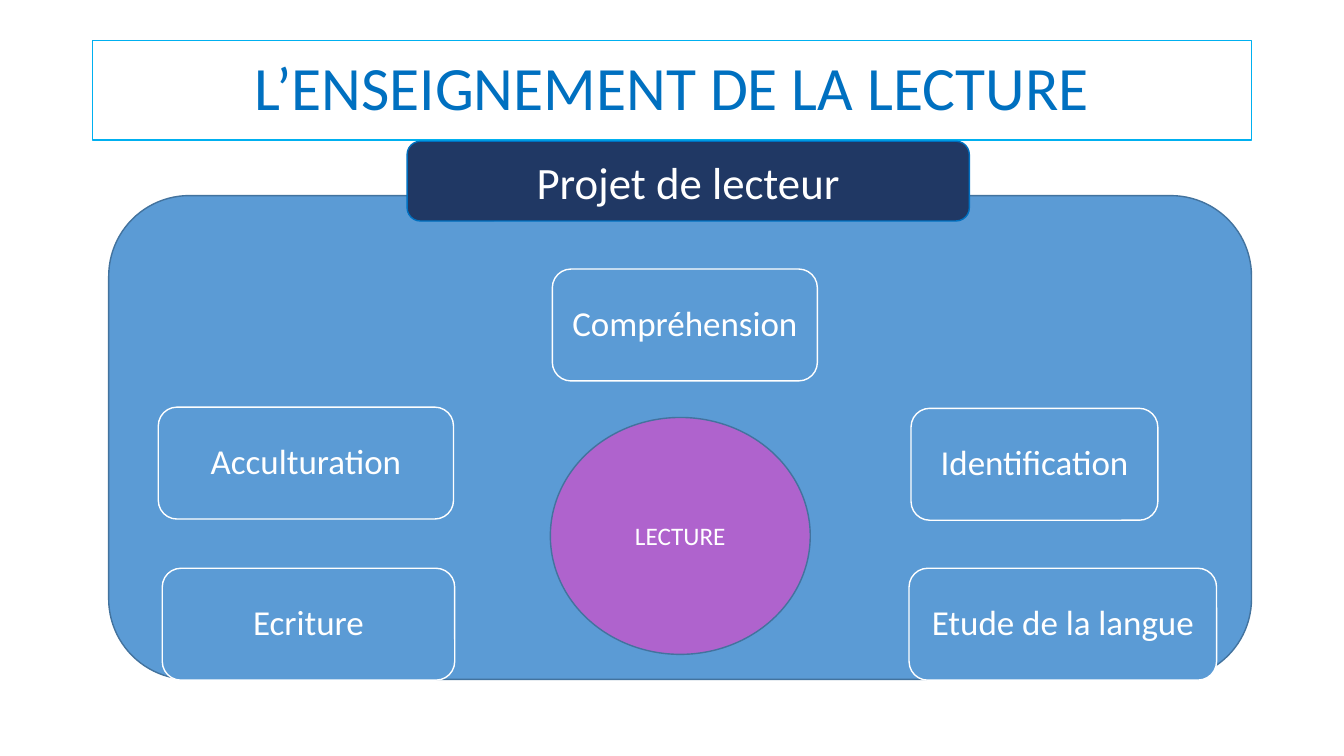
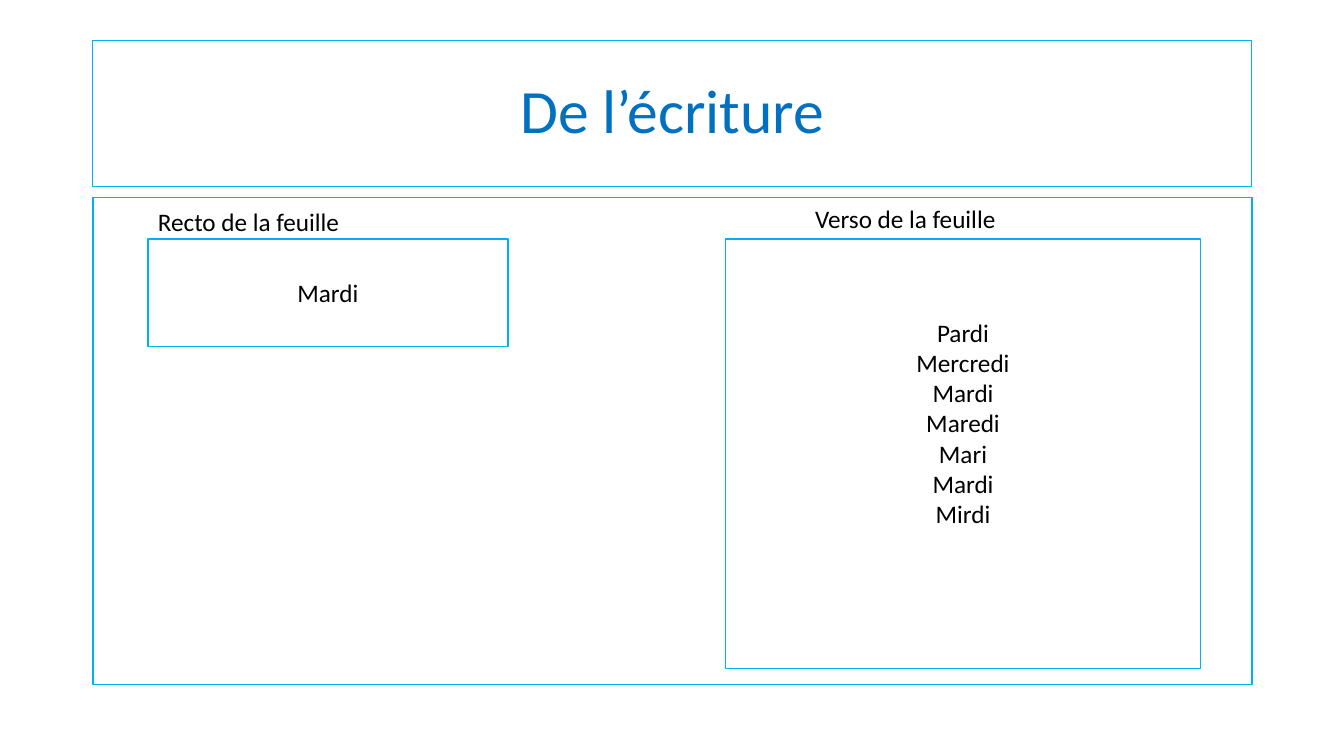
"""Build two slides on teaching reading and on writing."""
import dataclasses

import pptx
import pptx.dml.color
import pptx.enum.shapes
import pptx.enum.text
import pptx.util

Cm = pptx.util.Cm
Pt = pptx.util.Pt
Preset = pptx.enum.shapes.MSO_SHAPE
Align = pptx.enum.text.PP_ALIGN
Anchor = pptx.enum.text.MSO_ANCHOR


@dataclasses.dataclass(frozen=True)
class Theme:
    font: str = "Calibri"
    white: str = "FFFFFF"
    black: str = "000000"
    title: str = "0070C0"
    frame: str = "00B0F0"
    panel: str = "5B9BD5"
    outline: str = "43739E"
    core: str = "AF63CD"
    banner: str = "203864"
    title_size: int = 44
    banner_size: int = 32
    topic_size: int = 25
    body_size: int = 18


class Deck:
    def __init__(self, theme):
        self.theme = theme
        self.presentation = pptx.Presentation()
        self.presentation.slide_width = Cm(33.87)
        self.presentation.slide_height = Cm(19.05)
        self.slide = None

    def new_slide(self, title, title_height):
        blank = self.presentation.slide_layouts[6]
        self.slide = self.presentation.slides.add_slide(blank)
        heading = self.box((2.34, 1.02, 29.21, title_height), None,
                           self.theme.frame, weight=0.75)
        self.set_text(heading, [title], self.theme.title_size,
                      self.theme.title, spacing=0.9)

    def box(self, area, fill, line, preset=Preset.RECTANGLE, weight=1):
        shape = self.slide.shapes.add_shape(preset, *map(Cm, area))
        shape.shadow.inherit = False
        if fill:
            shape.fill.solid()
            shape.fill.fore_color.rgb = pptx.dml.color.RGBColor.from_string(fill)
        else:
            shape.fill.background()
        shape.line.color.rgb = pptx.dml.color.RGBColor.from_string(line)
        shape.line.width = Pt(weight)
        return shape

    def set_text(self, shape, lines, size, color, align=Align.CENTER,
                 anchor=Anchor.MIDDLE, spacing=1.0):
        frame = shape.text_frame
        frame.word_wrap = True
        frame.vertical_anchor = anchor
        frame.text = "\n".join(lines)
        for paragraph in frame.paragraphs:
            paragraph.alignment = align
            paragraph.line_spacing = spacing
            paragraph.font.name = self.theme.font
            paragraph.font.size = Pt(size)
            paragraph.font.color.rgb = pptx.dml.color.RGBColor.from_string(color)

    def topic(self, label, left, top, width):
        card = self.box((left, top, width, 2.82), self.theme.panel,
                        self.theme.white, Preset.ROUNDED_RECTANGLE)
        self.set_text(card, [label], self.theme.topic_size, self.theme.white,
                      spacing=0.9)

    def sheet(self, area, words):
        page = self.box(area, self.theme.white, self.theme.frame)
        self.set_text(page, words, self.theme.body_size, self.theme.black)
        return page

    def caption(self, label, left, top):
        note = self.slide.shapes.add_textbox(Cm(left), Cm(top), Cm(8.28), Cm(1.02))
        self.set_text(note, [label], self.theme.body_size, self.theme.black,
                      Align.LEFT, Anchor.TOP)


def build_reading(deck):
    theme = deck.theme
    deck.new_slide("L’ENSEIGNEMENT DE LA LECTURE", 2.51)
    deck.box((2.74, 4.93, 28.8, 12.19), theme.panel, theme.outline,
             Preset.ROUNDED_RECTANGLE)
    topics = [
        ("Compréhension", 13.92, 6.78, 6.68),
        ("Identification", 22.96, 10.29, 6.22),
        ("Etude de la langue", 22.91, 14.32, 7.75),
        ("Ecriture", 4.09, 14.32, 7.37),
        ("Acculturation", 3.99, 10.26, 7.44),
    ]
    for topic in topics:
        deck.topic(*topic)
    core = deck.box((13.87, 10.52, 6.55, 5.97), theme.core, theme.outline,
                    Preset.OVAL)
    deck.set_text(core, ["LECTURE"], theme.body_size, theme.white)
    banner = deck.box((10.26, 3.56, 14.17, 2.01), theme.banner, theme.title,
                      Preset.ROUNDED_RECTANGLE)
    deck.set_text(banner, ["Projet de lecteur"], theme.banner_size, theme.white)


def build_writing(deck):
    deck.new_slide("De l’écriture", 3.68)
    deck.box((2.34, 4.98, 29.21, 12.27), deck.theme.white, deck.theme.frame)
    verso = deck.sheet((18.29, 6.02, 11.96, 10.82),
                       ["Pardi", "Mercredi", "Mardi", "Maredi", "Mari",
                        "Mardi", "Mirdi"])
    verso.text_frame.margin_bottom = Cm(1.68)
    deck.sheet((3.73, 6.02, 9.07, 2.72), ["Mardi"])
    deck.caption("Recto de la feuille", 3.73, 5.08)
    deck.caption("Verso de la feuille", 20.29, 5)


def main():
    deck = Deck(Theme())
    build_reading(deck)
    build_writing(deck)
    deck.presentation.save("out.pptx")


if __name__ == "__main__":
    main()
